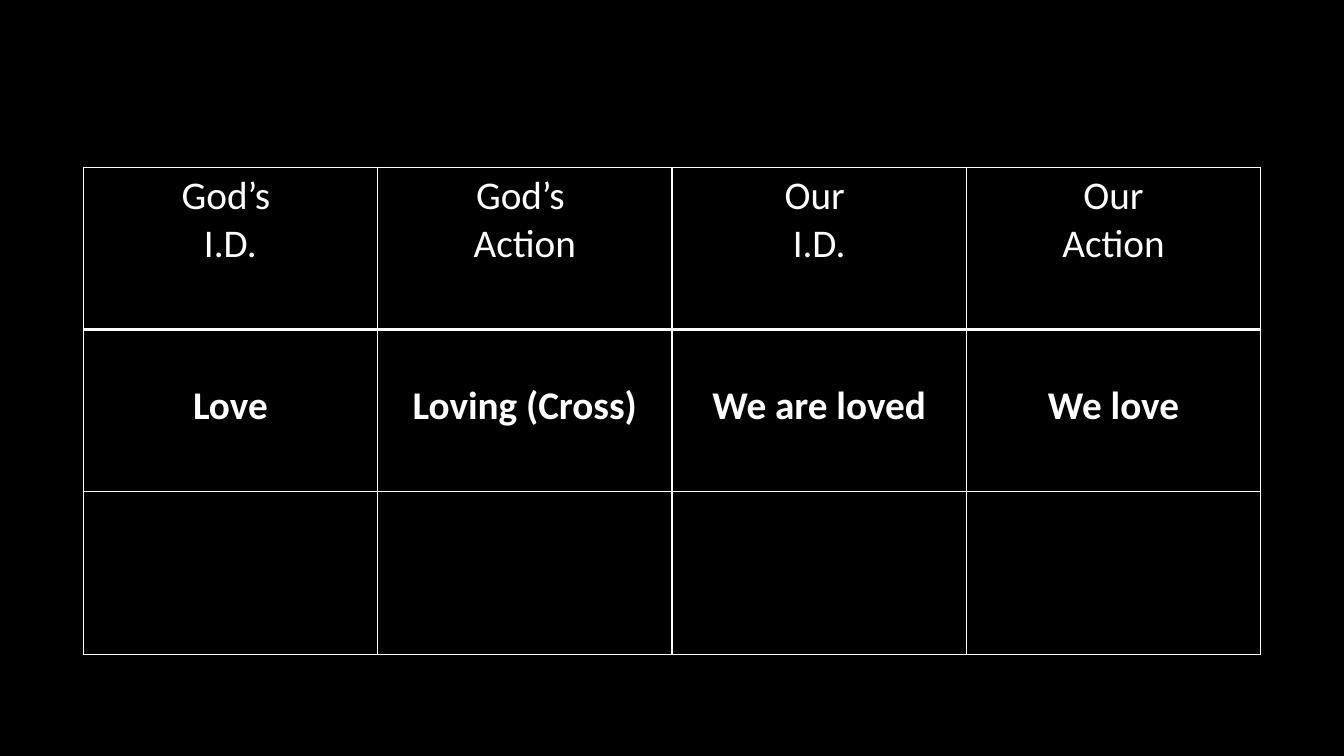
from lxml import etree
from pptx import Presentation
from pptx.dml.color import RGBColor
from pptx.enum.text import PP_ALIGN
from pptx.oxml.ns import qn
from pptx.util import Inches, Pt

CENTER = PP_ALIGN.CENTER
COLORS = {"background": "000000", "foreground": "FFFFFF"}
BLANK_LAYOUT = 6

ROWS = [
    ["God’s \nI.D.", "God’s \nAction", "Our \nI.D.", "Our\nAction"],
    ["Love", "Loving (Cross)", "We are loved", "We love"],
    ["", "", "", ""],
]
COLUMN_WIDTH, ROW_HEIGHT = Inches(2.92), Inches(1.61)


def add_border(cell, side, points):
    """Draw one solid edge of a table cell."""
    line = etree.SubElement(cell._tc.get_or_add_tcPr(), qn(f"a:ln{side}"), w=str(Pt(points)))
    fill = etree.SubElement(line, qn("a:solidFill"))
    etree.SubElement(fill, qn("a:srgbClr"), val=COLORS["foreground"])


# Slide and background
presentation = Presentation()
presentation.slide_width, presentation.slide_height = Inches(13.33), Inches(7.5)
slide = presentation.slides.add_slide(presentation.slide_layouts[BLANK_LAYOUT])
slide.background.fill.solid()
slide.background.fill.fore_color.rgb = RGBColor.from_string(COLORS["background"])

# Table grid, centred across the slide
column_count = len(ROWS[0])
table_width = COLUMN_WIDTH * column_count
table = slide.shapes.add_table(
    len(ROWS), column_count,
    (presentation.slide_width - table_width) // 2, Inches(1.66),
    table_width, ROW_HEIGHT * len(ROWS),
).table
table.first_row = table.horz_banding = False
for column in table.columns:
    column.width = COLUMN_WIDTH
for row in table.rows:
    row.height = ROW_HEIGHT

# Cells: plain headings, bold answers one line lower
for row_index, texts in enumerate(ROWS):
    is_header = row_index == 0
    for column_index, text in enumerate(texts):
        cell = table.cell(row_index, column_index)
        cell.text = text
        if not is_header:
            cell.margin_top = Inches(0.52)
        for paragraph in cell.text_frame.paragraphs:
            paragraph.alignment = CENTER
            paragraph.font.name = "Calibri"
            paragraph.font.size = Pt(28)
            paragraph.font.bold = not is_header
            paragraph.font.color.rgb = RGBColor.from_string(COLORS["foreground"])
        for side in "LRTB":
            add_border(cell, side, 3 if is_header and side == "B" else 1)
        cell.fill.background()

presentation.save("out.pptx")
